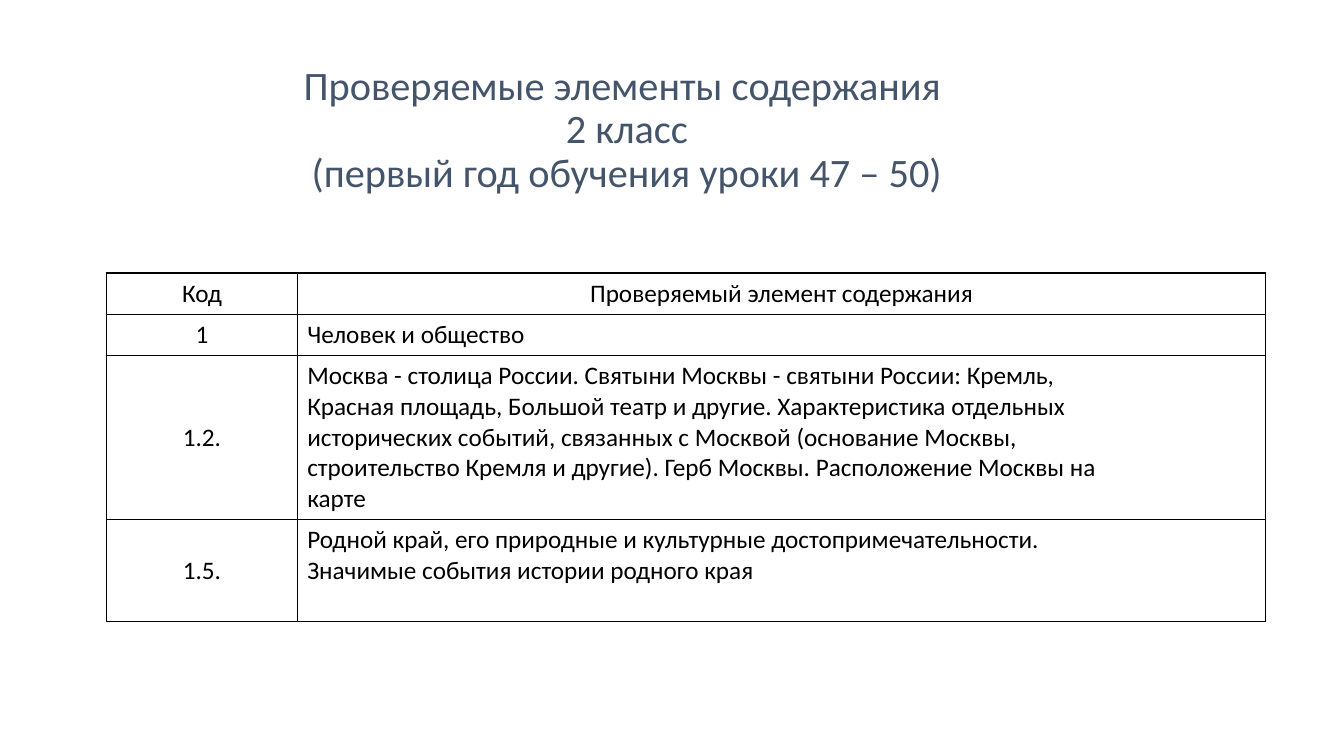
"""Build the slide listing the assessed content elements for grade 2."""
import dataclasses

import lxml.etree
import pptx
import pptx.dml.color
import pptx.enum.text
import pptx.oxml.ns
import pptx.util

Cm = pptx.util.Cm
Pt = pptx.util.Pt
RGBColor = pptx.dml.color.RGBColor
Align = pptx.enum.text.PP_ALIGN
Anchor = pptx.enum.text.MSO_ANCHOR
qn = pptx.oxml.ns.qn

FONT = "Calibri"
SLATE = RGBColor(0x44, 0x54, 0x6A)
BLACK = RGBColor(0, 0, 0)

TITLE = (
    "Проверяемые элементы содержания \v"
    "2 класс\v"
    "(первый год обучения уроки 47 – 50)"
)


@dataclasses.dataclass(frozen=True)
class Row:
    code: str
    content: str
    height: float
    content_align: Align = Align.LEFT
    code_anchor: Anchor = Anchor.TOP


ROWS = [
    Row("Код", "Проверяемый элемент содержания", 1.04, Align.CENTER),
    Row("1", "Человек и общество", 1.04),
    Row(
        "1.2.",
        "Москва - столица России. Святыни Москвы - святыни России: Кремль,\n"
        "Красная площадь, Большой театр и другие. Характеристика отдельных\n"
        "исторических событий, связанных с Москвой (основание Москвы,\n"
        "строительство Кремля и другие). Герб Москвы. Расположение Москвы на\n"
        "карте",
        4.14,
        code_anchor=Anchor.MIDDLE,
    ),
    Row(
        "1.5.",
        "Родной край, его природные и культурные достопримечательности.\n"
        "Значимые события истории родного края",
        2.57,
        code_anchor=Anchor.MIDDLE,
    ),
]
COLUMN_WIDTHS = (4.8, 24.41)


def format_text(tf, size: float, color: RGBColor, align: Align) -> None:
    for p in tf.paragraphs:
        p.alignment = align
        for r in p.runs:
            r.font.name = FONT
            r.font.size = Pt(size)
            r.font.bold = False
            r.font.color.rgb = color


def add_borders(cell) -> None:
    tc_pr = cell._tc.get_or_add_tcPr()
    for i, side in enumerate(("lnL", "lnR", "lnT", "lnB")):
        ln = lxml.etree.Element(qn(f"a:{side}"), w=str(Pt(1)))
        fill = lxml.etree.SubElement(ln, qn("a:solidFill"))
        lxml.etree.SubElement(fill, qn("a:srgbClr"), val=str(BLACK))
        tc_pr.insert(i, ln)


def fill_cell(cell, text: str, align: Align, anchor: Anchor) -> None:
    cell.text_frame.text = text
    cell.vertical_anchor = anchor
    cell.fill.background()
    add_borders(cell)
    format_text(cell.text_frame, 18, BLACK, align)


def add_title(s) -> None:
    sp = s.shapes.title
    sp.left, sp.top, sp.width, sp.height = Cm(6.53), Cm(1.45), Cm(18.54), Cm(3.68)
    tf = sp.text_frame
    tf.text = TITLE
    tf.word_wrap = True
    tf.auto_size = pptx.enum.text.MSO_AUTO_SIZE.NONE
    tf.vertical_anchor = Anchor.MIDDLE
    tf.paragraphs[0].line_spacing = 0.9
    format_text(tf, 28.8, SLATE, Align.CENTER)


def add_content_table(s) -> None:
    height = sum(row.height for row in ROWS)
    table = s.shapes.add_table(
        len(ROWS), len(COLUMN_WIDTHS),
        Cm(2.69), Cm(6.88), Cm(sum(COLUMN_WIDTHS)), Cm(height),
    ).table
    table.first_row = False
    table.horz_banding = False
    for column, width in zip(table.columns, COLUMN_WIDTHS):
        column.width = Cm(width)
    for i, row in enumerate(ROWS):
        table.rows[i].height = Cm(row.height)
        fill_cell(table.cell(i, 0), row.code, Align.CENTER, row.code_anchor)
        fill_cell(table.cell(i, 1), row.content, row.content_align, Anchor.TOP)


def main() -> None:
    prs = pptx.Presentation()
    prs.slide_width, prs.slide_height = Cm(33.87), Cm(19.05)
    s = prs.slides.add_slide(prs.slide_layouts[5])
    add_title(s)
    add_content_table(s)
    prs.save("out.pptx")


if __name__ == "__main__":
    main()
